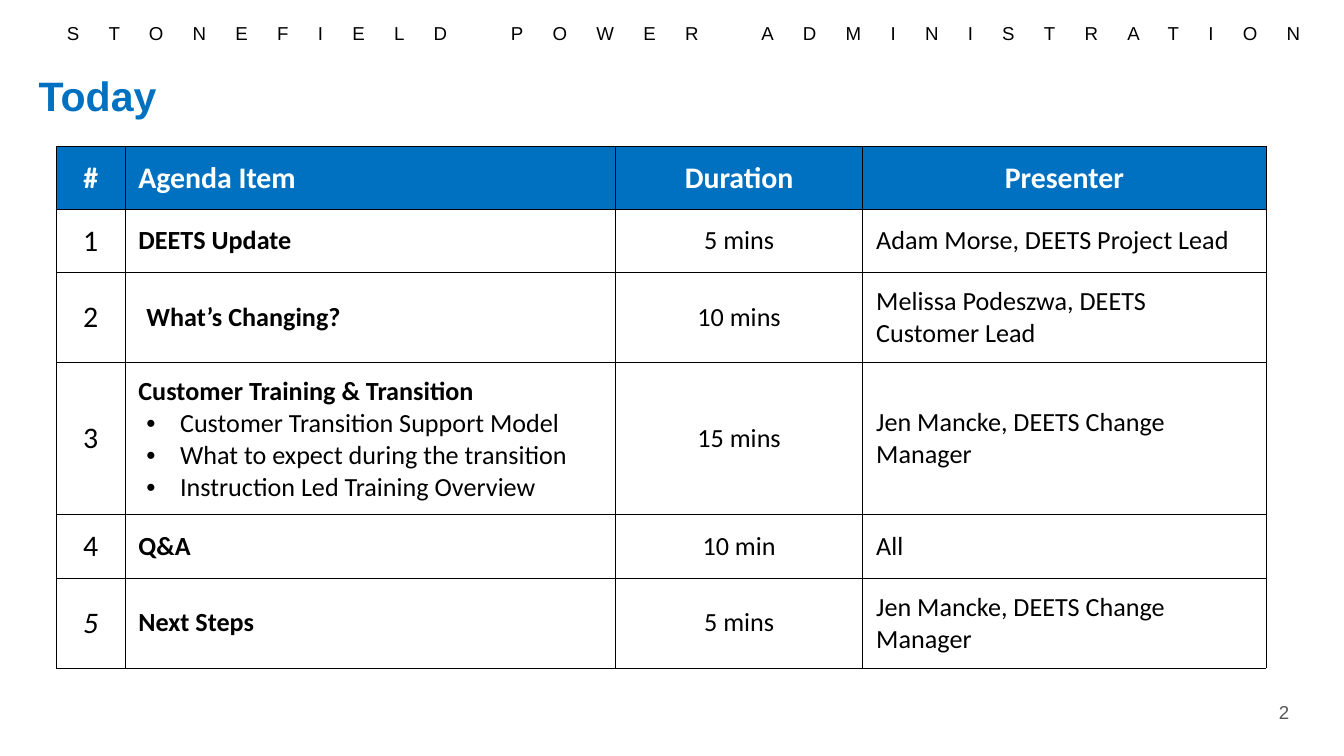
import pptx
import pptx.util
import pptx.dml.color
import pptx.enum.text
import pptx.oxml
import pptx.oxml.ns
from lxml import etree

Inches, Pt = pptx.util.Inches, pptx.util.Pt
RGBColor = pptx.dml.color.RGBColor
PP_ALIGN = pptx.enum.text.PP_ALIGN
MIDDLE = pptx.enum.text.MSO_ANCHOR.MIDDLE
TOP = pptx.enum.text.MSO_ANCHOR.TOP
qn = pptx.oxml.ns.qn

BLUE = RGBColor(0x00, 0x70, 0xC0)
BLACK = RGBColor(0x00, 0x00, 0x00)
WHITE = RGBColor(0xFF, 0xFF, 0xFF)
GRAY = RGBColor(0x59, 0x59, 0x59)

# Content: text, box, anchor, alignment, font, letter spacing in points
LABELS = [
    ("STONEFIELD POWER ADMINISTRATION", (0, 0.11, 10.17, 0.27), TOP, PP_ALIGN.CENTER,
     {"size": Pt(10), "color": BLACK}, 15.7),
    ("Today", (0.19, 0.32, 6.33, 0.77), MIDDLE, PP_ALIGN.LEFT,
     {"size": Pt(22), "color": BLUE, "bold": True}, 0),
    ("2", (7.36, 5.15, 2.33, 0.3), MIDDLE, PP_ALIGN.RIGHT,
     {"size": Pt(10), "color": GRAY}, 0),
]
HEADER = ("#", "Agenda Item", "Duration", "Presenter")
AGENDA = [
    ("1", "DEETS Update", "5 mins", "Adam Morse, DEETS Project Lead"),
    ("2", "What’s Changing?", "10 mins", "Melissa Podeszwa, DEETS Customer Lead"),
    ("3", "Customer Training & Transition", "15 mins", "Jen Mancke, DEETS Change Manager"),
    ("4", "Q&A", "10 min", "All"),
    ("5", "Next Steps", "5 mins", "Jen Mancke, DEETS Change Manager"),
]
SUBTOPICS = {"3": ["Customer Transition Support Model",
                   "What to expect during the transition",
                   "Instruction Led Training Overview"]}
INDENTED, ITALIC = "2", "5"  # agenda numbers with a special format

TABLE_LEFT, TABLE_TOP = 0.42, 1.09
COL_WIDTHS = (0.51, 3.65, 1.84, 3)
ROW_HEIGHTS = (0.46, 0.47, 0.67, 1.13, 0.47, 0.67)
CENTERED = (0, 2)  # body columns


def write(p, text, align, font):
    p.alignment = align
    r = p.add_run()
    r.text = text
    for name, value in font.items():
        if name == "color":
            r.font.color.rgb = value
        else:
            setattr(r.font, name, value)
    return r


def indent(p, left, first=0.0, bullet=None):
    pPr = p._p.get_or_add_pPr()
    pPr.set("marL", str(Inches(left)))
    pPr.set("indent", str(Inches(first)))
    if bullet:
        etree.SubElement(pPr, qn("a:buFont")).set("typeface", "Arial")
        etree.SubElement(pPr, qn("a:buChar")).set("char", bullet)


def format_cell(cell, fill):
    tcPr = cell._tc.get_or_add_tcPr()
    for side in ("lnL", "lnR", "lnT", "lnB"):
        ln = etree.SubElement(tcPr, qn(f"a:{side}"), w=str(Pt(0.5)))
        line_fill = etree.SubElement(ln, qn("a:solidFill"))
        etree.SubElement(line_fill, qn("a:srgbClr")).set("val", str(BLACK))
    cell.fill.solid()
    cell.fill.fore_color.rgb = fill
    cell.vertical_anchor = MIDDLE
    for side in ("left", "right", "top", "bottom"):
        setattr(cell, f"margin_{side}", Inches(0.1))


# Widescreen 16:9 page
prs = pptx.Presentation()
prs.slide_width = Inches(10)
prs.slide_height = prs.slide_width * 9 // 16
s = prs.slides.add_slide(prs.slide_layouts[6])

# Banner, title and page number
for text, box, anchor, align, font, spacing in LABELS:
    tf = s.shapes.add_textbox(*map(Inches, box)).text_frame
    tf.word_wrap = True
    tf.vertical_anchor = anchor
    r = write(tf.paragraphs[0], text, align, {"name": "Arial", **font})
    if spacing:
        r.font._element.set("spc", str(round(spacing * 100)))

# Agenda table
rows = [HEADER] + AGENDA
table = s.shapes.add_table(
    len(rows), len(HEADER), Inches(TABLE_LEFT), Inches(TABLE_TOP),
    Inches(sum(COL_WIDTHS)), Inches(sum(ROW_HEIGHTS))).table
table.horz_banding = False
for column, width in zip(table.columns, COL_WIDTHS):
    column.width = Inches(width)
for row, height in zip(table.rows, ROW_HEIGHTS):
    row.height = Inches(height)

for i, values in enumerate(rows):
    head, number = i == 0, values[0]
    for j, text in enumerate(values):
        cell = table.cell(i, j)
        format_cell(cell, BLUE if head else WHITE)
        centered = j in CENTERED or (head and j == 3)
        font = {
            "name": "Calibri",
            "size": Pt(16 if head or j == 0 else 14),
            "color": WHITE if head else BLACK,
            "bold": head or j == 1,
            "italic": j == 0 and number == ITALIC,
        }
        tf = cell.text_frame
        p = tf.paragraphs[0]
        write(p, text, PP_ALIGN.CENTER if centered else PP_ALIGN.LEFT, font)
        if j == 1:
            if number == INDENTED:
                indent(p, 0.06)
            for topic in SUBTOPICS.get(number, []):
                p = tf.add_paragraph()
                write(p, topic, PP_ALIGN.LEFT, {**font, "bold": False})
                indent(p, 0.31, -0.25, "•")

prs.save("out.pptx")
